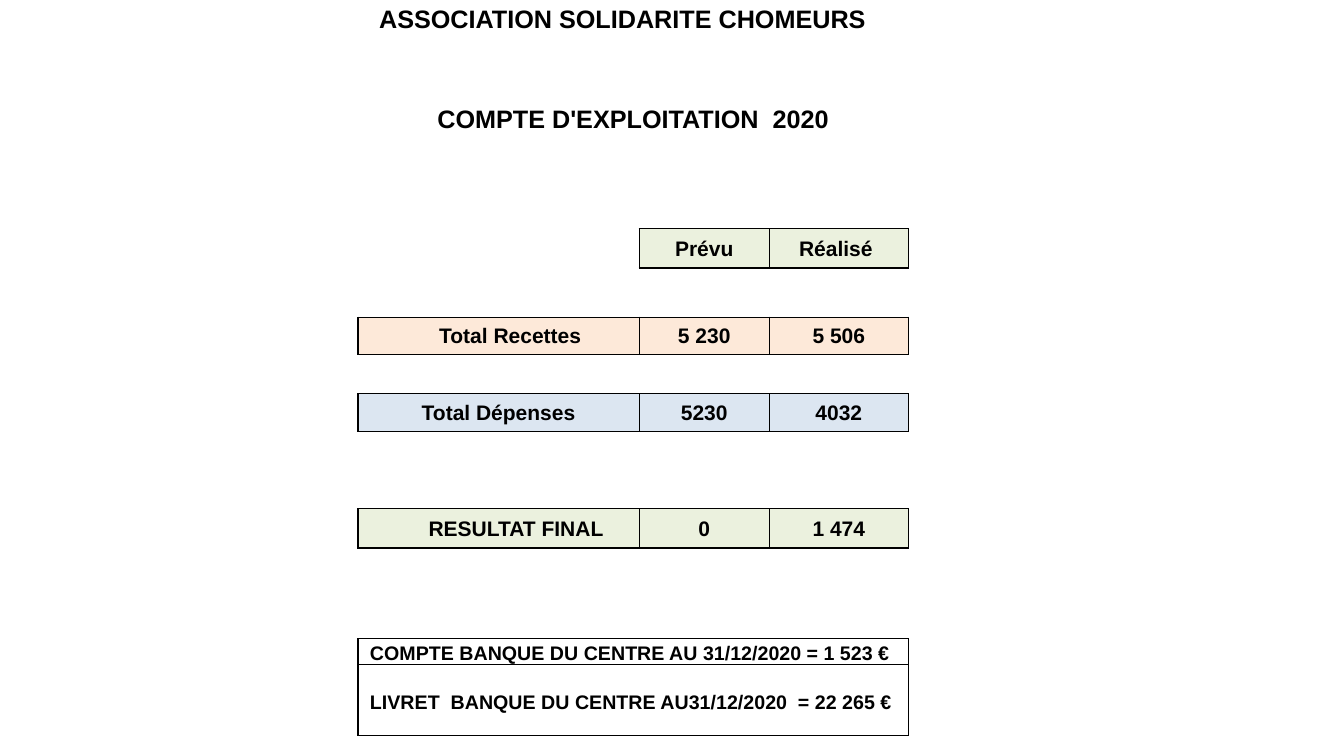
import pptx
import pptx.util
import pptx.dml.color
import pptx.enum.text
import pptx.oxml.ns
import lxml.etree

Inches = pptx.util.Inches
ANCHOR = pptx.enum.text.MSO_ANCHOR
ALIGN = pptx.enum.text.PP_ALIGN
qn = pptx.oxml.ns.qn

COLORS = {
    "ink": "000000",
    "paper": "FFFFFF",
    "green": "EBF1DE",
    "orange": "FDE9D9",
    "blue": "DCE6F1",
}
COLUMN_WIDTHS = [2.79, 1.29, 1.38]
ROW_HEIGHTS = [0.34, 0.34, 0.31, 0.34, 0.34, 0.34, 0.26, 0.39, 0.26, 0.23, 0.37,
               0.39, 0.37, 0.38, 0.39, 0.39, 0.38, 0.38, 0.14, 0.26, 0.26, 0.44]
NO_STYLE = "{2D5ABB26-0587-4C30-8999-92F81FD0307C}"


def rgb(color):
    return pptx.dml.color.RGBColor.from_string(COLORS[color])


def fill_cell(cell, color):
    cell.fill.solid()
    cell.fill.fore_color.rgb = rgb(color)


def write(cell, text, size=15, align=ALIGN.CENTER, anchor=ANCHOR.MIDDLE,
          left=0.01, right=0.01):
    cell.margin_left, cell.margin_right = Inches(left), Inches(right)
    cell.vertical_anchor = anchor
    paragraph = cell.text_frame.paragraphs[0]
    paragraph.alignment = align
    run = paragraph.add_run()
    run.text = text
    run.font.name = "Arial"
    run.font.size = pptx.util.Pt(size)
    run.font.bold = True
    run.font.color.rgb = rgb("ink")


def draw_borders(cell, sides):
    """Line the given sides (letters of LRTB), placed ahead of the cell fill."""
    properties = cell._tc.get_or_add_tcPr()
    drawn = [side for side in "LRTB" if side in sides]
    for position, side in enumerate(drawn):
        line = lxml.etree.Element(qn("a:ln" + side), w=str(pptx.util.Pt(1)))
        fill = lxml.etree.SubElement(line, qn("a:solidFill"))
        lxml.etree.SubElement(fill, qn("a:srgbClr"), val=COLORS["ink"])
        properties.insert(position, line)


def add_grid(slide):
    """Plain white table whose empty rows keep their heights."""
    frame = slide.shapes.add_table(
        len(ROW_HEIGHTS), len(COLUMN_WIDTHS), Inches(3.55), Inches(0),
        Inches(sum(COLUMN_WIDTHS)), Inches(sum(ROW_HEIGHTS)))
    table = frame.table
    table.first_row = table.horz_banding = False
    table._tbl.tblPr.find(qn("a:tableStyleId")).text = NO_STYLE
    for column, width in zip(table.columns, COLUMN_WIDTHS):
        column.width = Inches(width)
    for row, height in zip(table.rows, ROW_HEIGHTS):
        row.height = Inches(height)
    for cell in table.iter_cells():
        fill_cell(cell, "paper")
        cell.margin_left = cell.margin_right = cell.margin_top = Inches(0.01)
        cell.margin_bottom = 0
        lxml.etree.SubElement(cell.text_frame.paragraphs[0]._p,
                              qn("a:endParaRPr"), sz="600")
    return table


def write_across(table, row, text, **text_format):
    first = table.cell(row, 0)
    first.merge(table.cell(row, 2))
    write(first, text, **text_format)


def add_band(table, row, color, entries):
    """Coloured row of bordered cells, aligned to the right-hand columns."""
    start = len(COLUMN_WIDTHS) - len(entries)
    for column, (text, text_format) in enumerate(entries, start):
        cell = table.cell(row, column)
        fill_cell(cell, color)
        write(cell, text, **text_format)
        draw_borders(cell, "LRTB")


def main():
    deck = pptx.Presentation()
    deck.slide_width, deck.slide_height = Inches(13.33), Inches(7.5)
    slide = deck.slides.add_slide(deck.slide_layouts[6])
    accounts = add_grid(slide)

    # Headings
    write_across(accounts, 0, "ASSOCIATION SOLIDARITE CHOMEURS", size=18,
                 align=ALIGN.LEFT, anchor=ANCHOR.BOTTOM, left=0.21)
    write_across(accounts, 3, "COMPTE D'EXPLOITATION  2020", size=18,
                 anchor=ANCHOR.BOTTOM)

    # Planned and actual amounts
    add_band(accounts, 7, "green", [("Prévu", {}), ("Réalisé", {"right": 0.07})])
    add_band(accounts, 10, "orange", [
        ("Total Recettes", {"left": 0.24}), ("5 230", {}), ("5 506", {})])
    add_band(accounts, 12, "blue", [
        ("Total Dépenses", {}), ("5230", {}), ("4032", {})])
    add_band(accounts, 15, "green", [
        ("RESULTAT FINAL", {"align": ALIGN.LEFT, "left": 0.7}),
        ("0", {}), ("1 474", {})])

    # Bank balances inside one frame
    balance = {"size": 14, "align": ALIGN.LEFT, "left": 0.12}
    write_across(accounts, 19, "COMPTE BANQUE DU CENTRE AU 31/12/2020 = 1 523 €",
                 anchor=ANCHOR.BOTTOM, **balance)
    write_across(accounts, 21, "LIVRET  BANQUE DU CENTRE AU31/12/2020  = 22 265 €",
                 anchor=ANCHOR.TOP, **balance)
    for row, edge in ((19, "T"), (20, ""), (21, "B")):
        for column, side in enumerate(("L", "", "R")):
            cell = accounts.cell(row, column)
            draw_borders(cell, edge + ("LR" if cell.is_merge_origin else side))

    deck.save("out.pptx")


if __name__ == "__main__":
    main()
